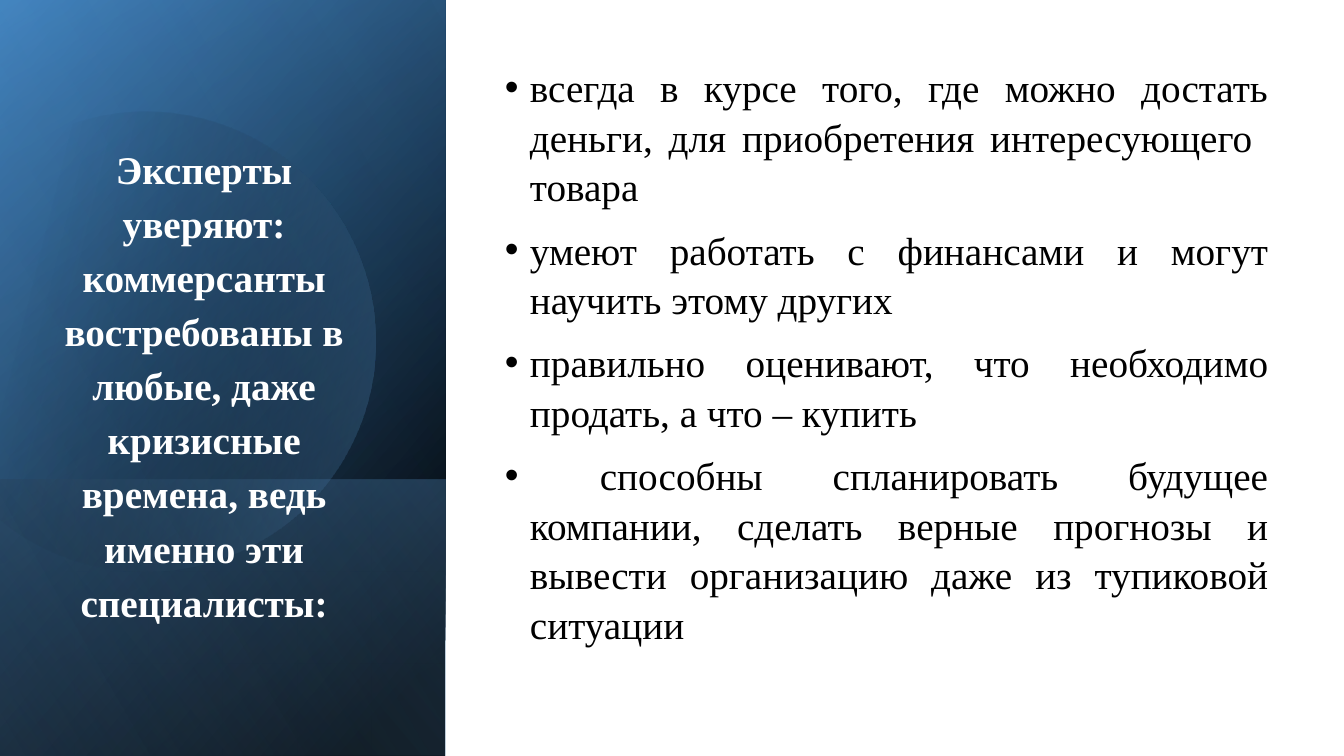
import math
from dataclasses import dataclass

from lxml import etree
from pptx import Presentation
from pptx.dml.color import RGBColor
from pptx.enum.shapes import MSO_SHAPE
from pptx.enum.text import MSO_ANCHOR, PP_ALIGN
from pptx.oxml.ns import qn
from pptx.util import Pt

RECTANGLE = MSO_SHAPE.RECTANGLE
TOP, BOTTOM = MSO_ANCHOR.TOP, MSO_ANCHOR.BOTTOM
CENTER, JUSTIFY = PP_ALIGN.CENTER, PP_ALIGN.JUSTIFY


@dataclass(frozen=True)
class Theme:
    font: str = "Times New Roman"
    text_size: int = 28
    black: str = "000000"
    white: str = "FFFFFF"
    deep_blue: str = "2E75B6"
    blue: str = "5B9BD5"
    light_blue: str = "9DC3E6"


THEME = Theme()
SLIDE_WIDTH, SLIDE_HEIGHT = 960, 540
PANEL_WIDTH = 318.24
BAND_HEIGHT = 197.28

HEADING = ("Эксперты уверяют: коммерсанты востребованы в любые, даже\v"
           "кризисные времена, ведь именно эти специалисты:")
SKILLS = [
    "всегда в курсе того, где можно достать деньги, для приобретения интересующего  товара",
    "умеют работать с финансами и могут научить этому других",
    "правильно оценивают, что необходимо продать, а что – купить",
    " способны спланировать будущее компании, сделать верные прогнозы и "
    "вывести организацию даже из тупиковой ситуации",
]


def fill_gradient(shape, angle, stops):
    """Each stop is (position %, colour, opacity %); the angle runs clockwise."""
    shape.shadow.inherit = False
    shape.line.fill.background()
    shape.fill.gradient()
    shape.fill.gradient_angle = 360 - angle
    for stop, (position, color, _) in zip(shape.fill.gradient_stops, stops):
        stop.position = position / 100
        stop.color.rgb = RGBColor.from_string(color)
    colors = shape._element.spPr.iter(qn("a:srgbClr"))
    for color_element, (_, _, opacity) in zip(colors, stops):
        if opacity < 100:
            alpha = etree.SubElement(color_element, qn("a:alpha"))
            alpha.set("val", str(opacity * 1000))


def add_panel(slide, top, height, angle, stops):
    """Rectangle at the left edge, turned a quarter and mirrored for its gradient."""
    left = (PANEL_WIDTH - height) / 2
    turned_top = top + (height - PANEL_WIDTH) / 2
    shape = slide.shapes.add_shape(
        RECTANGLE, Pt(left), Pt(turned_top), Pt(height), Pt(PANEL_WIDTH))
    shape.rotation = 90
    shape._element.spPr.xfrm.set("flipH", "1")
    fill_gradient(shape, angle, stops)


def arc_points(center_x, center_y, radius, start, end):
    """The two control points and the end point of a Bézier arc."""
    start, end = math.radians(start), math.radians(end)
    handle = 4 / 3 * math.tan((end - start) / 4)
    offsets = [
        (math.cos(start) - handle * math.sin(start), math.sin(start) + handle * math.cos(start)),
        (math.cos(end) + handle * math.sin(end), math.sin(end) - handle * math.cos(end)),
        (math.cos(end), math.sin(end)),
    ]
    return [(center_x + radius * x, center_y + radius * y) for x, y in offsets]


def add_cut_circle(slide, center_x, center_y, radius, directions, turn, angle, stops):
    """Circle through the directions, closed by a chord and then turned."""
    first = math.radians(directions[0])
    builder = slide.shapes.build_freeform(
        center_x + radius * math.cos(first), center_y + radius * math.sin(first),
        scale=Pt(1))
    for start, end in zip(directions, directions[1:]):
        builder.add_line_segments(
            arc_points(center_x, center_y, radius, start, end), close=False)
    shape = builder.convert_to_shape()

    # Join every three segments into one curve
    outline = next(shape._element.iter(qn("a:path")))
    segments = outline.findall(qn("a:lnTo"))
    for index in range(0, len(segments), 3):
        curve = etree.SubElement(outline, qn("a:cubicBezTo"))
        for segment in segments[index:index + 3]:
            curve.append(segment[0])
            outline.remove(segment)
    etree.SubElement(outline, qn("a:close"))
    shape.rotation = turn
    fill_gradient(shape, angle, stops)


def add_bullet(paragraph, indent):
    properties = paragraph._p.get_or_add_pPr()
    properties.set("marL", str(Pt(indent)))
    properties.set("indent", str(-Pt(indent)))
    etree.SubElement(properties, qn("a:buFont")).set("typeface", "Arial")
    etree.SubElement(properties, qn("a:buChar")).set("char", "•")


def add_text(slide, box, texts, color, align, anchor, line_spacing,
             bold=False, bulleted=False, margin_bottom=3.6):
    text_box = slide.shapes.add_textbox(*(Pt(length) for length in box))
    text_frame = text_box.text_frame
    text_frame.word_wrap = True
    text_frame.vertical_anchor = anchor
    text_frame.margin_bottom = Pt(margin_bottom)
    for index, text in enumerate(texts):
        paragraph = text_frame.paragraphs[0] if index == 0 else text_frame.add_paragraph()
        paragraph.text = text
        paragraph.alignment = align
        paragraph.line_spacing = line_spacing
        if index:
            paragraph.space_before = Pt(10)
        if bulleted:
            add_bullet(paragraph, 18)
        for run in paragraph.runs:
            run.font.name = THEME.font
            run.font.size = Pt(THEME.text_size)
            run.font.bold = bold
            run.font.color.rgb = RGBColor.from_string(color)


def main():
    presentation = Presentation()
    presentation.slide_width = Pt(SLIDE_WIDTH)
    presentation.slide_height = Pt(SLIDE_HEIGHT)
    slide = presentation.slides.add_slide(presentation.slide_layouts[6])

    # Layered blue panel
    add_panel(slide, 0, SLIDE_HEIGHT, 50,
              [(8, THEME.black, 100), (100, THEME.deep_blue, 100)])
    add_panel(slide, 0, SLIDE_HEIGHT, 30,
              [(0, THEME.black, 0), (99, THEME.blue, 46)])
    add_panel(slide, SLIDE_HEIGHT - BAND_HEIGHT, BAND_HEIGHT, 130,
              [(2, THEME.blue, 29), (100, THEME.black, 30)])
    add_cut_circle(slide, 103.7, 240.9, 164.2, [-118.1, -90, 0, 90, 150.3], -16.1, 30,
                   [(29, THEME.black, 0), (100, THEME.blue, 43)])
    add_panel(slide, 0, SLIDE_HEIGHT, 120,
              [(0, THEME.black, 0), (99, THEME.light_blue, 11)])

    # Heading on the panel
    add_text(slide, (15.12, 74.88, 261.36, 408.24), [HEADING], THEME.white,
             CENTER, BOTTOM, 1.15, bold=True, margin_bottom=36.7)

    # List of skills
    add_text(slide, (353.52, 40.32, 559.4, 446.4), SKILLS, THEME.black,
             JUSTIFY, TOP, 1.05, bulleted=True)

    presentation.save("out.pptx")


if __name__ == "__main__":
    main()
